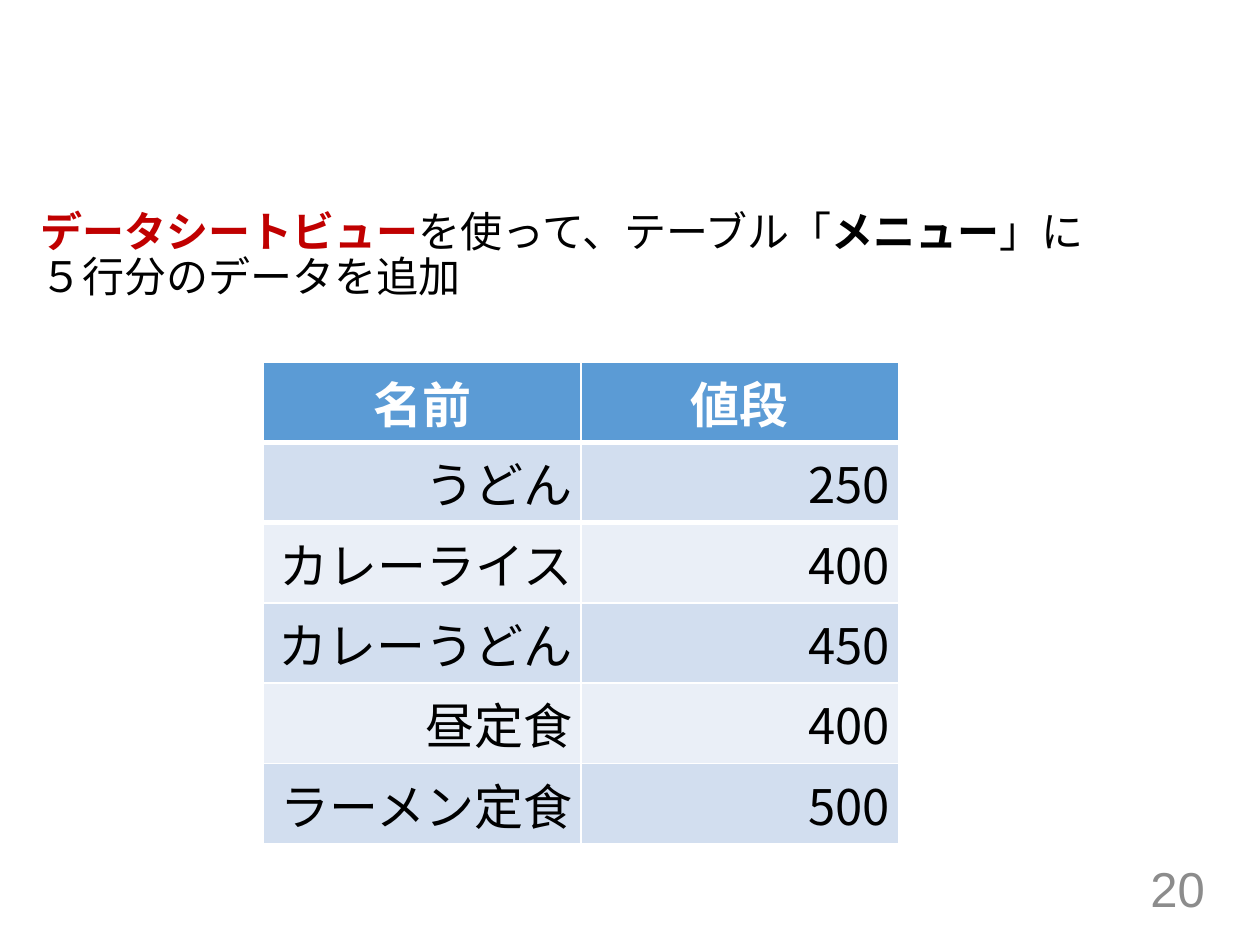
import lxml.etree
import pptx
import pptx.dml.color
import pptx.enum.text
import pptx.oxml.ns
import pptx.util

WIDTH, HEIGHT = 10, 7.5
JAPANESE = "Noto Sans CJK JP"
BLACK, WHITE, RED, GREY = "000000", "FFFFFF", "C00000", "8C8C8C"
HEADER_FILL, BAND_FILLS = "5B9BD5", ("D2DEEF", "EAEFF7")
ALIGN = pptx.enum.text.PP_ALIGN
ANCHOR = pptx.enum.text.MSO_ANCHOR

INSTRUCTION = [
    ("データシートビュー", RED, True),
    ("を使って、テーブル「", BLACK, False),
    ("メニュー", BLACK, True),
    ("」に５行分のデータを追加", BLACK, False),
]
MENU = [
    ("名前", "値段"),
    ("うどん", "250"),
    ("カレーライス", "400"),
    ("カレーうどん", "450"),
    ("昼定食", "400"),
    ("ラーメン定食", "500"),
]


def colour(value):
    """Return the RGB colour for a hex string."""
    return pptx.dml.color.RGBColor.from_string(value)


def place(box):
    """Turn percentages of the slide's size into lengths."""
    return [pptx.util.Inches(share * side / 100) for share, side in zip(box, (WIDTH, HEIGHT) * 2)]


def add_element(parent, tag, **attributes):
    """Append a drawing element to its parent and return it."""
    return lxml.etree.SubElement(parent, pptx.oxml.ns.qn(tag), **attributes)


def style(para, size, face, hue, bold=False, align=ALIGN.LEFT):
    """Set the alignment and the font of a whole paragraph."""
    para.alignment = align
    font = para.font
    font.size, font.bold, font.name = pptx.util.Pt(size), bold, face
    font.color.rgb = colour(hue)
    defaults = para._p.pPr.find(pptx.oxml.ns.qn("a:defRPr"))
    add_element(defaults, "a:ea", typeface=face)


def set_margins(area, side, end):
    """Give a text frame or a table cell its inner margins."""
    area.margin_left = area.margin_right = pptx.util.Inches(side)
    area.margin_top = area.margin_bottom = pptx.util.Inches(end)


def set_border(cell, edge, points, hue):
    """Draw one edge of a cell, ahead of the cell's fill."""
    properties = cell._tc.get_or_add_tcPr()
    line = add_element(properties, f"a:{edge}", w=str(pptx.util.Pt(points)))
    add_element(add_element(line, "a:solidFill"), "a:srgbClr", val=hue)


def add_text(page, box, anchor):
    """Add a wrapping text box and return its frame."""
    frame = page.shapes.add_textbox(*place(box)).text_frame
    frame.word_wrap, frame.vertical_anchor = True, anchor
    return frame


def add_instruction(page, box):
    """Add the sentence that states the task."""
    frame = add_text(page, box, ANCHOR.TOP)
    set_margins(frame, 0.07, 0.04)
    para = frame.paragraphs[0]
    para.line_spacing, para.space_before = 0.9, pptx.util.Pt(10)
    style(para, 24, JAPANESE, BLACK)
    for text, hue, bold in INSTRUCTION:
        span = para.add_run()
        span.text, span.font.bold = text, bold
        span.font.color.rgb = colour(hue)


def add_menu(page, box):
    """Add the table of dishes and prices with banded rows."""
    table = page.shapes.add_table(len(MENU), len(MENU[0]), *place(box)).table
    for row, record in enumerate(MENU):
        header = row == 0
        fill = HEADER_FILL if header else BAND_FILLS[(row - 1) % 2]
        for column, text in enumerate(record):
            cell = table.cell(row, column)
            cell.text = text
            if row < 2:
                set_border(cell, "lnB" if header else "lnT", 3, WHITE)
            cell.fill.solid()
            cell.fill.fore_color.rgb = colour(fill)
            set_margins(cell, 0.07, 0.04)
            style(cell.text_frame.paragraphs[0], 28, JAPANESE,
                  WHITE if header else BLACK, header,
                  ALIGN.CENTER if header else ALIGN.RIGHT)


def add_page_number(page, box):
    """Add the page number at the lower right."""
    frame = add_text(page, box, ANCHOR.MIDDLE)
    set_margins(frame, 0.1, 0.05)
    frame.text = "20"
    style(frame.paragraphs[0], 28, "Arial", GREY, align=ALIGN.RIGHT)


def main():
    """Build the slide and save the deck."""
    deck = pptx.Presentation()
    deck.slide_width, deck.slide_height = pptx.util.Inches(WIDTH), pptx.util.Inches(HEIGHT)
    page = deck.slides.add_slide(deck.slide_layouts[6])
    add_page_number(page, (74.1, 92, 22.5, 4))
    add_instruction(page, (2.5, 21.8, 85.7, 14.5))
    add_menu(page, (20.9, 38.3, 50.4, 51))
    deck.save("out.pptx")


if __name__ == "__main__":
    main()
